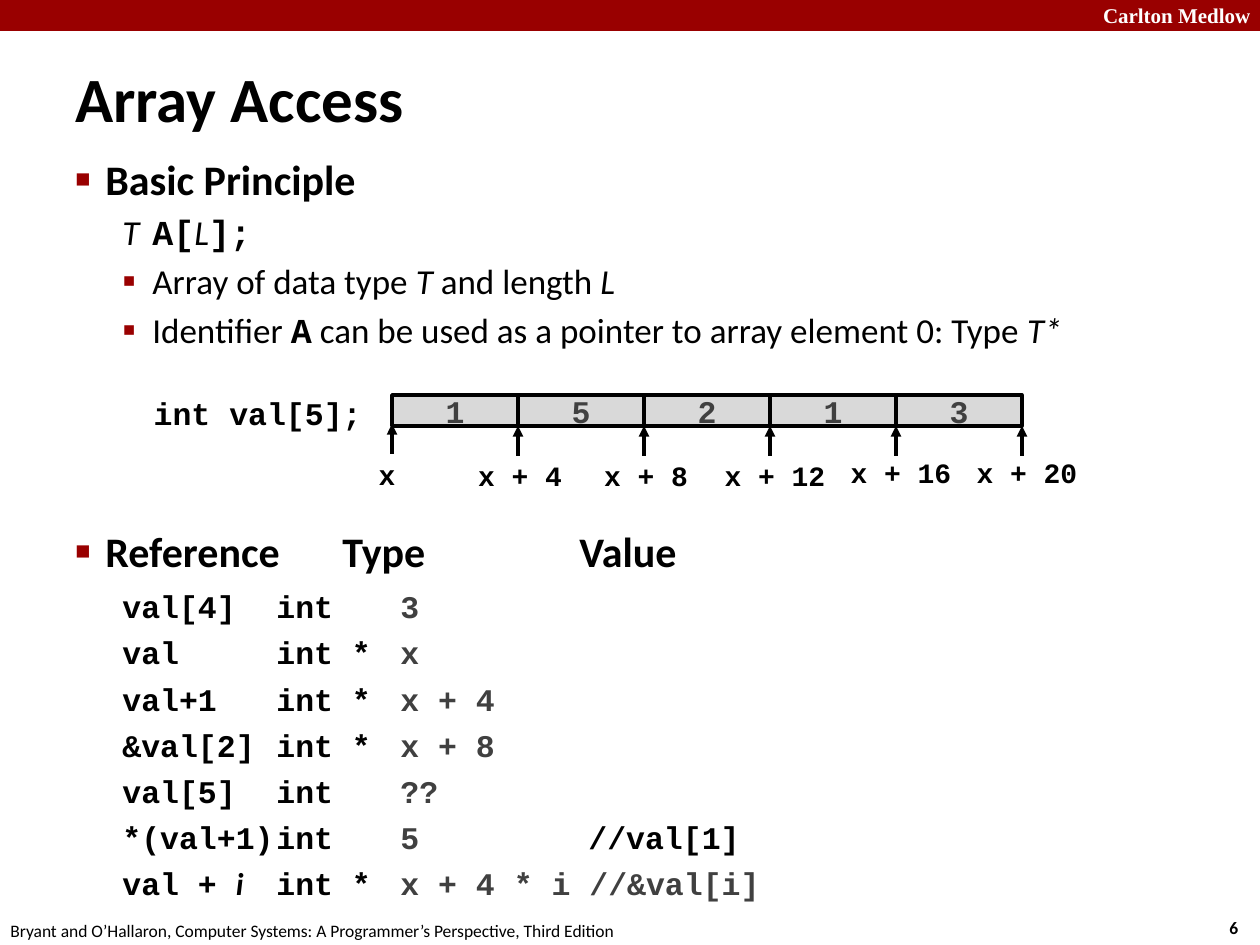
from lxml import etree
from pptx import Presentation
from pptx.dml.color import RGBColor
from pptx.enum.shapes import MSO_CONNECTOR as Connector, MSO_SHAPE as Shape
from pptx.enum.text import MSO_ANCHOR as Anchor, PP_ALIGN as Align
from pptx.oxml.ns import qn
from pptx.util import Emu, Pt

RED = RGBColor(0x99, 0x00, 0x00)
WHITE = RGBColor(0xFF, 0xFF, 0xFF)
BLACK = RGBColor(0x00, 0x00, 0x00)
GRAY = RGBColor(0x40, 0x40, 0x40)
CELL_FILL = RGBColor(0xD9, 0xD9, 0xD9)
SANS, MONO, SERIF = "Calibri", "Courier New", "Times New Roman"

ARRAY_LEFT, ARRAY_TOP, CELL_WIDTH, CELL_HEIGHT = 392, 395, 126, 31
ARRAY_VALUES = [1, 5, 2, 1, 3]
LABEL_CENTERS = [387, 520, 646, 775, 901, 1027]
LABEL_TOPS = [451, 452, 452, 452, 449, 449]
HEADING_TABS = [267, 504]
ROW_TABS = [154, 278, 466]
ROWS = [
    ("val[4]", "int", "3"),
    ("val", "int *", "x"),
    ("val+1", "int *", "x + 4"),
    ("&val[2]", "int *", "x + 8"),
    ("val[5]", "int", "??"),
    ("*(val+1)", "int", "5"),
    ("val + ", "int *", "x + 4 * i //&val[i]"),
]


def px(length):
    """Turn pixels into EMU."""
    return Emu(round(length * 914400 / 126))


def add_run(paragraph, text, size, font=SANS, color=BLACK, bold=False, italic=False):
    """Append one formatted run."""
    run = paragraph.add_run()
    run.text = text
    run.font.size = Pt(size)
    run.font.name = font
    run.font.bold = bold
    run.font.italic = italic
    run.font.color.rgb = color


def add_box(slide, left, top, width, height, anchor=Anchor.TOP):
    """Add an empty wrapping text box and return its text frame."""
    frame = slide.shapes.add_textbox(px(left), px(top), px(width), px(height)).text_frame
    frame.word_wrap = True
    frame.vertical_anchor = anchor
    return frame


def add_label(slide, place, text, size, align=Align.LEFT, anchor=Anchor.TOP, **style):
    """Add a text box with a single run."""
    paragraph = add_box(slide, *place, anchor).paragraphs[0]
    paragraph.alignment = align
    add_run(paragraph, text, size, **style)


def set_hanging(paragraph, margin, bullet=None, bullet_size=100):
    """Give a paragraph a hanging indent and an optional red bullet."""
    properties = paragraph._p.get_or_add_pPr()
    properties.set("marL", str(px(margin)))
    properties.set("indent", str(px(-30)))
    if bullet is None:
        etree.SubElement(properties, qn("a:buNone"))
        return
    color = etree.SubElement(properties, qn("a:buClr"))
    etree.SubElement(color, qn("a:srgbClr"), val=str(RED))
    etree.SubElement(properties, qn("a:buSzPct"), val=str(bullet_size * 1000))
    etree.SubElement(properties, qn("a:buFont"), typeface="Arial")
    etree.SubElement(properties, qn("a:buChar"), char=bullet)


def set_tabs(paragraph, positions):
    """Set left tab stops."""
    tabs = etree.SubElement(paragraph._p.get_or_add_pPr(), qn("a:tabLst"))
    for position in positions:
        etree.SubElement(tabs, qn("a:tab"), pos=str(px(position)), algn="l")


def add_rectangle(slide, left, top, width, height, fill):
    """Add a flat rectangle without an outline."""
    shape = slide.shapes.add_shape(Shape.RECTANGLE, px(left), px(top), px(width), px(height))
    shape.shadow.inherit = False
    shape.fill.solid()
    shape.fill.fore_color.rgb = fill
    shape.line.fill.background()
    return shape


def add_cell(slide, left, value):
    """Add one outlined array cell with its value."""
    shape = add_rectangle(slide, left, ARRAY_TOP, CELL_WIDTH, CELL_HEIGHT, CELL_FILL)
    shape.line.color.rgb = BLACK
    shape.line.width = Pt(2)
    frame = shape.text_frame
    frame.word_wrap = False
    frame.vertical_anchor = Anchor.MIDDLE
    frame.margin_top = frame.margin_bottom = 0
    frame.paragraphs[0].alignment = Align.CENTER
    add_run(frame.paragraphs[0], str(value), 18, MONO, GRAY, bold=True)


def add_arrow(slide, x, start, end):
    """Add a vertical arrow."""
    line = slide.shapes.add_connector(Connector.STRAIGHT, px(x), px(start), px(x), px(end))
    line.line.color.rgb = BLACK
    line.line.width = Pt(2)
    etree.SubElement(line.line._get_or_add_ln(), qn("a:tailEnd"), type="triangle")
    etree.SubElement(line._element.spPr, qn("a:effectLst"))


def add_principle(slide):
    """Add the basic principle and its sub-points."""
    frame = add_box(slide, 63, 147, 1111, 220)
    set_hanging(frame.paragraphs[0], 30, "■", 60)
    add_run(frame.paragraphs[0], "Basic Principle", 24, bold=True)
    code = {"font": MONO, "bold": True}
    italic = {"italic": True}
    points = [
        (None, [("T\t", italic), ("A[", code), ("L", italic), ("];", code)]),
        ("▪", [("Array of data type ", {}), ("T", italic), (" and length ", {}), ("L", italic)]),
        ("▪", [("Identifier ", {}), ("A", code),
               (" can be used as a pointer to array element 0: Type ", {}), ("T*", italic)]),
    ]
    for bullet, runs in points:
        paragraph = frame.add_paragraph()
        paragraph.space_before = Pt(4)
        set_hanging(paragraph, 77, bullet, 110)
        for text, style in runs:
            add_run(paragraph, text, 20, **style)


def add_array(slide):
    """Add the array cells with their addresses."""
    add_label(slide, (140, 388, 234, 50), "int val[5];", 18, Align.RIGHT, font=MONO, bold=True)
    for index, value in enumerate(ARRAY_VALUES):
        add_cell(slide, ARRAY_LEFT + index * CELL_WIDTH, value)
    for index, (center, top) in enumerate(zip(LABEL_CENTERS, LABEL_TOPS)):
        text = f"x + {4 * index}" if index else "x"
        add_label(slide, (center - 68, top, 136, 47), text, 16, Align.CENTER, font=MONO, bold=True)
        lift = 0 if index else 2
        add_arrow(slide, ARRAY_LEFT + index * CELL_WIDTH, 456 - lift, 426 - lift)


def add_references(slide):
    """Add the reference, type and value lines."""
    heading = add_box(slide, 63, 519, 1111, 62).paragraphs[0]
    set_hanging(heading, 30, "■", 60)
    set_tabs(heading, HEADING_TABS)
    add_run(heading, "Reference\tType\tValue", 24, bold=True)
    frame = add_box(slide, 110, 581, 1064, 325)
    for index, (reference, kind, value) in enumerate(ROWS):
        paragraph = frame.add_paragraph() if index else frame.paragraphs[0]
        paragraph.space_after = Pt(4.8)
        set_tabs(paragraph, ROW_TABS)
        add_run(paragraph, reference, 18, MONO, bold=True)
        if reference == "val + ":
            add_run(paragraph, "i", 18, bold=True, italic=True)
        add_run(paragraph, f"\t{kind}\t", 18, MONO, bold=True)
        add_run(paragraph, value, 18, MONO, GRAY, bold=True)
        if reference == "*(val+1)":
            add_run(paragraph, "\t//val[1]", 18, MONO, bold=True)


def main():
    """Build the slide and save it."""
    presentation = Presentation()
    presentation.slide_width, presentation.slide_height = px(1260), px(945)
    slide = presentation.slides.add_slide(presentation.slide_layouts[6])
    add_rectangle(slide, 0, 0, 1260, 31, RED)
    add_label(slide, (1063, -4, 200, 38), "Carlton Medlow", 12, Align.RIGHT,
              font=SERIF, color=WHITE, bold=True)
    add_label(slide, (1217, 911, 47, 34), "6", 10, bold=True)
    add_label(slide, (-2, 914, 660, 34),
              "Bryant and O’Hallaron, Computer Systems: A Programmer’s Perspective, Third Edition", 10)
    add_label(slide, (63, 58, 766, 79), "Array Access", 36, anchor=Anchor.MIDDLE, bold=True)
    add_principle(slide)
    add_array(slide)
    add_references(slide)
    presentation.save("out.pptx")


if __name__ == "__main__":
    main()
